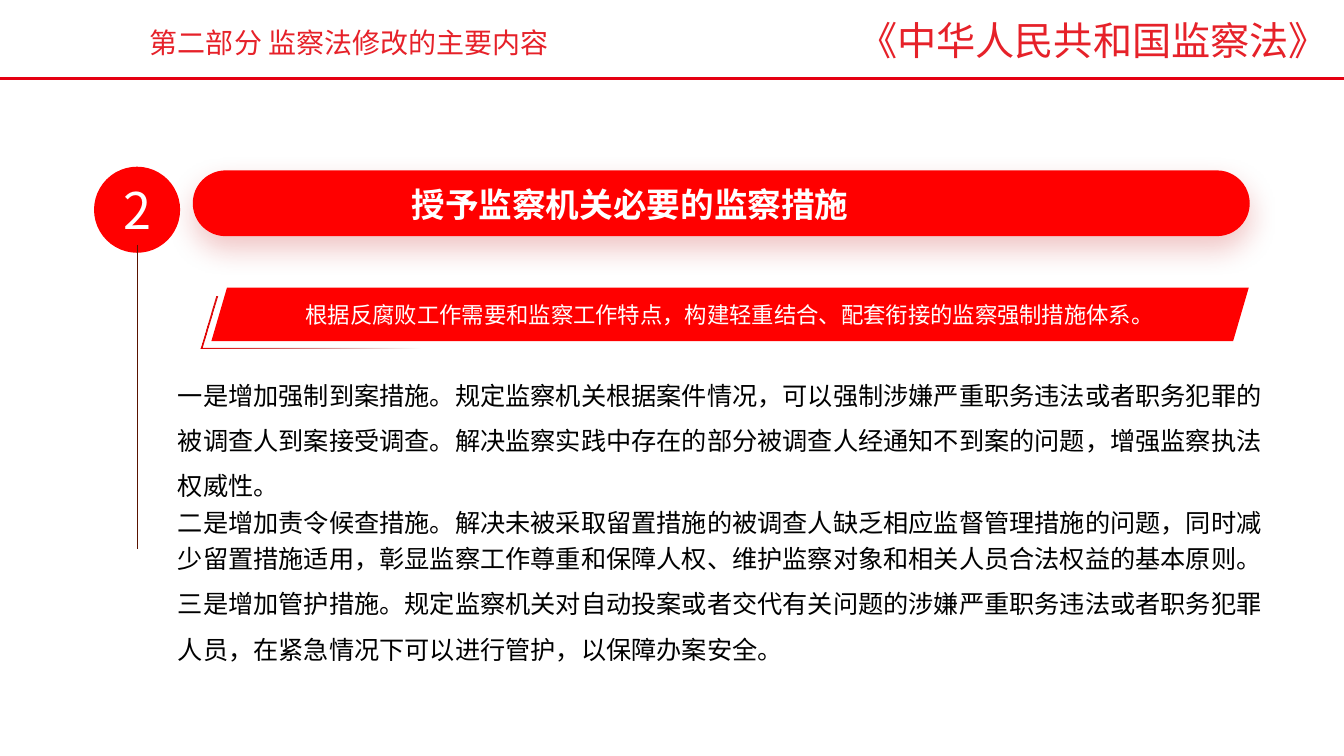
from dataclasses import dataclass

from lxml.etree import SubElement
from pptx import Presentation
from pptx.dml.color import RGBColor
from pptx.enum.shapes import MSO_CONNECTOR as Connector, MSO_SHAPE as Preset
from pptx.enum.text import MSO_ANCHOR as Anchor, PP_ALIGN as Align
from pptx.oxml.ns import qn
from pptx.util import Pt


@dataclass(frozen=True)
class Theme:
    font: str = "Noto Sans CJK SC"
    red: str = "FF0000"
    header_red: str = "E62129"
    rule_red: str = "E50012"
    shadow_red: str = "C30F0F"
    stem: str = "591300"
    fade_from: str = "E30000"
    fade_to: str = "760303"
    white: str = "FFFFFF"
    black: str = "000000"
    number_size: int = 36
    title_size: int = 28
    heading_size: int = 24
    section_size: int = 20
    body_size: int = 18
    summary_size: int = 16


class SlideBuilder:
    def __init__(self, slide, theme):
        self.shapes = slide.shapes
        self.theme = theme

    def fill_text(self, frame, lines, size, color, align=Align.LEFT, bold=False):
        """Fill a frame with (text, line spacing) pairs."""
        for index, (text, spacing) in enumerate(lines):
            paragraph = frame.add_paragraph() if index else frame.paragraphs[0]
            paragraph.text = text
            paragraph.alignment = align
            paragraph.line_spacing = spacing
            font = paragraph.font
            font.size, font.bold, font.name = Pt(size), bold, self.theme.font
            font.color.rgb = RGBColor.from_string(color)
            # East Asian typeface
            properties = paragraph._p.pPr.find(qn("a:defRPr"))
            SubElement(properties, qn("a:ea"), typeface=self.theme.font)

    def text(self, box, lines, size, color, wrap=True, **style):
        frame = self.shapes.add_textbox(*map(Pt, box)).text_frame
        frame.word_wrap = wrap
        self.fill_text(frame, lines, size, color, **style)

    def shape(self, preset, box, adjustment=None, outlined=True):
        shape = self.shapes.add_shape(preset, *map(Pt, box))
        shape.shadow.inherit = False
        red = RGBColor.from_string(self.theme.red)
        shape.fill.solid()
        shape.fill.fore_color.rgb = red
        if outlined:
            shape.line.color.rgb = red
            shape.line.width = Pt(1)
        else:
            shape.line.fill.background()
        if adjustment is not None:
            shape.adjustments[0] = adjustment
        return shape

    def label(self, shape, text, size, margin=None):
        frame = shape.text_frame
        frame.word_wrap = True
        frame.vertical_anchor = Anchor.MIDDLE
        if margin is not None:
            frame.margin_left = frame.margin_right = Pt(margin)
            frame.margin_top = frame.margin_bottom = Pt(margin)
        self.fill_text(frame, [(text, 1.0)], size, self.theme.white, Align.CENTER)

    def drop_shadow(self, shape, blur, distance, opacity):
        effects = shape._element.spPr.find(qn("a:effectLst"))
        shadow = SubElement(effects, qn("a:outerShdw"), blurRad=str(Pt(blur)),
                            dist=str(Pt(distance)), dir="5400000",
                            algn="t", rotWithShape="0")
        color = SubElement(shadow, qn("a:srgbClr"), val=self.theme.shadow_red)
        SubElement(color, qn("a:alpha"), val=str(opacity * 1000))

    def line(self, start, end, color, width):
        line = self.shapes.add_connector(Connector.STRAIGHT, *map(Pt, start + end))
        line.line.color.rgb = RGBColor.from_string(color)
        line.line.width = Pt(width)
        SubElement(line._element.spPr, qn("a:effectLst"))

    def fading_outline(self, points):
        start, *others = [(Pt(x), Pt(y)) for x, y in points]
        builder = self.shapes.build_freeform(*start)
        builder.add_line_segments(others, close=True)
        shape = builder.convert_to_shape()
        shape.shadow.inherit = False
        shape.line.fill.background()
        shape.fill.gradient()
        shape.fill.gradient_angle = 0
        stops = shape.fill.gradient_stops
        for stop, position, color in zip(
                stops, (0, 1), (self.theme.fade_from, self.theme.fade_to)):
            stop.position = position
            stop.color.rgb = RGBColor.from_string(color)
        # The far end fades out completely
        last_color = shape._element.spPr.findall(".//" + qn("a:srgbClr"))[-1]
        SubElement(last_color, qn("a:alpha"), val="0")


def main():
    presentation = Presentation()
    presentation.slide_width, presentation.slide_height = Pt(960), Pt(540)
    slide = presentation.slides.add_slide(presentation.slide_layouts[6])
    theme = Theme()
    builder = SlideBuilder(slide, theme)

    # Header
    builder.text((100, 15, 303, 32), [("第二部分 监察法修改的主要内容", 1.0)],
                 theme.section_size, theme.header_red, wrap=False)
    builder.text((606, 8, 354, 41), [("《中华人民共和国监察法》", 1.0)],
                 theme.title_size, theme.header_red, wrap=False)
    builder.line((0, 56.2), (960, 56.2), theme.rule_red, 2.25)

    # Heading banner
    banner = builder.shape(Preset.ROUNDED_RECTANGLE, (138.2, 122.2, 754, 46), 0.5)
    builder.drop_shadow(banner, blur=20, distance=8, opacity=23)
    builder.text((164, 124.6, 572, 38), [("授予监察机关必要的监察措施", 1.1)],
                 theme.heading_size, theme.white, align=Align.CENTER, bold=True)

    # Three measures
    measures = [
        ("一是增加强制到案措施。规定监察机关根据案件情况，可以强制涉嫌严重职务违法或者职务犯罪的"
         "被调查人到案接受调查。解决监察实践中存在的部分被调查人经通知不到案的问题，增强监察执法"
         "权威性。", 1.5),
        ("二是增加责令候查措施。解决未被采取留置措施的被调查人缺乏相应监督管理措施的问题，同时减"
         "少留置措施适用，彰显监察工作尊重和保障人权、维护监察对象和相关人员合法权益的基本原则。", 1.2),
        ("三是增加管护措施。规定监察机关对自动投案或者交代有关问题的涉嫌严重职务违法或者职务犯罪"
         "人员，在紧急情况下可以进行管护，以保障办案安全。", 1.5),
    ]
    builder.text((120, 257, 790, 220), measures, theme.body_size, theme.black)

    # Number and its stem
    number = builder.shape(Preset.OVAL, (67.7, 119.6, 60.5, 60.5))
    builder.label(number, "2", theme.number_size)
    builder.line((98, 175), (98, 392), theme.stem, 0.75)

    # Summary ribbon with a fading edge
    ribbon = builder.shape(Preset.PARALLELOGRAM, (151, 205.4, 741, 38.2), 0.292,
                           outlined=False)
    builder.label(ribbon, "根据反腐败工作需要和监察工作特点，构建轻重结合、配套衔接的监察强制措施体系。",
                  theme.summary_size, margin=0)
    builder.fading_outline([(143.5, 249.2), (154.9, 211.6), (156.2, 211.6),
                            (145.3, 248), (301, 248), (300.5, 249.2)])

    presentation.save("out.pptx")


if __name__ == "__main__":
    main()
